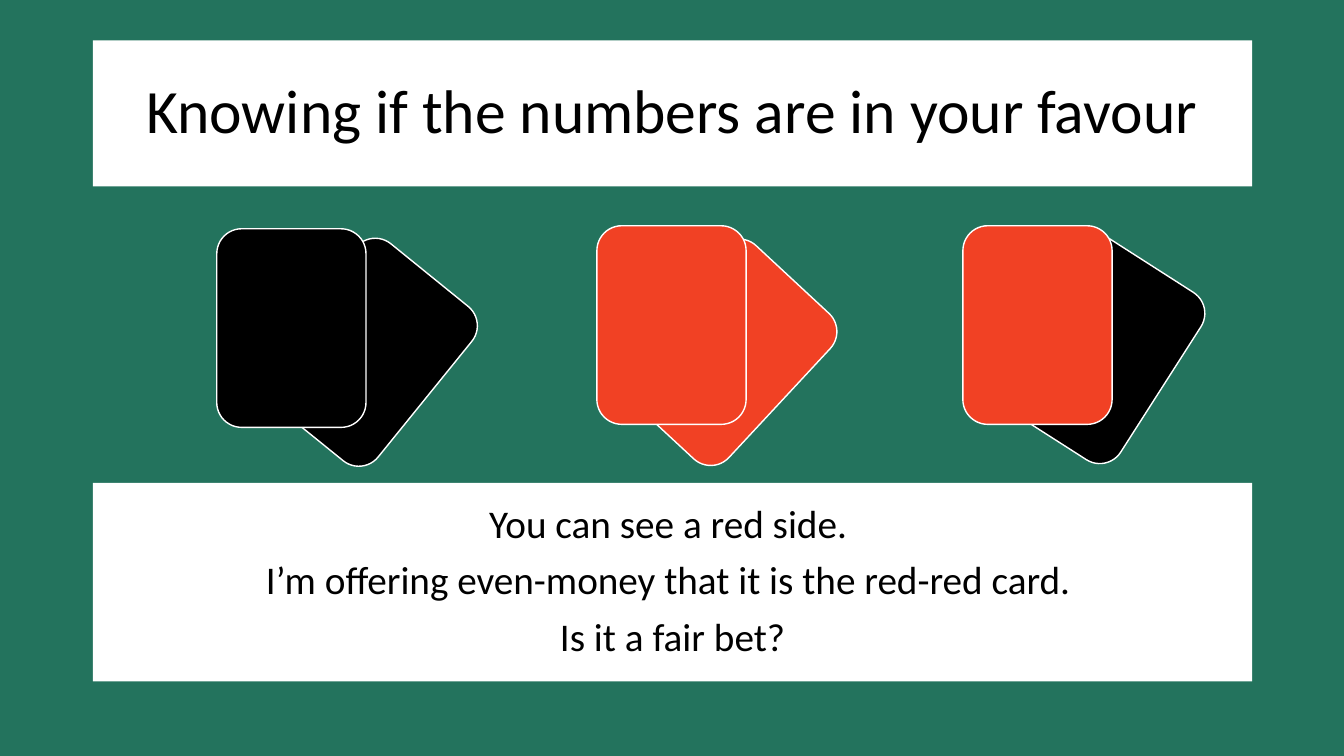
from dataclasses import dataclass

from lxml import etree
from pptx import Presentation
from pptx.dml.color import RGBColor
from pptx.enum.shapes import MSO_SHAPE
from pptx.enum.text import MSO_ANCHOR, MSO_AUTO_SIZE, PP_ALIGN
from pptx.oxml.ns import qn
from pptx.shapes.placeholder import SlidePlaceholder
from pptx.slide import Slide
from pptx.util import Emu, Pt

ROUNDED = MSO_SHAPE.ROUNDED_RECTANGLE
MIDDLE = MSO_ANCHOR.MIDDLE
NO_AUTOFIT = MSO_AUTO_SIZE.NONE
CENTER = PP_ALIGN.CENTER
EMU_PER_PX = 9144


@dataclass(frozen=True)
class Theme:
    table_green: RGBColor = RGBColor(0x23, 0x73, 0x5D)
    white: RGBColor = RGBColor(0xFF, 0xFF, 0xFF)
    black: RGBColor = RGBColor(0, 0, 0)
    red: RGBColor = RGBColor(0xF1, 0x41, 0x24)
    font: str = "Calibri"
    title_size: Pt = Pt(44)
    question_size: Pt = Pt(28)
    paragraph_gap: Pt = Pt(10)
    card_edge: Pt = Pt(1)


@dataclass(frozen=True)
class Card:
    left: int
    top: int
    color: RGBColor
    angle: float = 0


THEME = Theme()
SLIDE_WIDTH, SLIDE_HEIGHT = 1333, 750
PANEL_LEFT, PANEL_WIDTH = 92, 1150
CARD_WIDTH, CARD_HEIGHT = 148, 197
TITLE = "Knowing if the numbers are in your favour"
QUESTION = [
    "You can see a red side. ",
    "I’m offering even-money that it is the red-red card. ",
    "Is it a fair bet?",
]
CARDS = [
    Card(1015, 248, THEME.black, 32.6),
    Card(955, 224, THEME.red),
    Card(645, 251, THEME.red, 42.9),
    Card(592, 224, THEME.red),
    Card(290, 251, THEME.black, 39),
    Card(215, 227, THEME.black),
]


def px(length: int) -> Emu:
    return Emu(length * EMU_PER_PX)


def fill_panel(panel: SlidePlaceholder, top: int, height: int,
               lines: list[str], size: Pt) -> None:
    panel.left, panel.top = px(PANEL_LEFT), px(top)
    panel.width, panel.height = px(PANEL_WIDTH), px(height)
    panel.fill.solid()
    panel.fill.fore_color.rgb = THEME.white
    frame = panel.text_frame
    frame.word_wrap = True
    frame.auto_size = NO_AUTOFIT
    frame.vertical_anchor = MIDDLE
    for index, line in enumerate(lines):
        paragraph = frame.add_paragraph() if index else frame.paragraphs[0]
        paragraph.alignment = CENTER
        paragraph.line_spacing = 0.9
        paragraph.space_before = THEME.paragraph_gap if index else Pt(0)
        properties = paragraph._p.get_or_add_pPr()
        properties.set("marL", "0")
        properties.set("indent", "0")
        etree.SubElement(properties, qn("a:buNone"))
        run = paragraph.add_run()
        run.text = line
        run.font.name = THEME.font
        run.font.size = size
        run.font.color.rgb = THEME.black


def draw_card(slide: Slide, card: Card) -> None:
    face = slide.shapes.add_shape(ROUNDED, px(card.left), px(card.top),
                                  px(CARD_WIDTH), px(CARD_HEIGHT))
    face.rotation = card.angle
    face.shadow.inherit = False
    face.fill.solid()
    face.fill.fore_color.rgb = card.color
    face.line.color.rgb = THEME.white
    face.line.width = THEME.card_edge


def main() -> None:
    deck = Presentation()
    deck.slide_width, deck.slide_height = px(SLIDE_WIDTH), px(SLIDE_HEIGHT)
    slide = deck.slides.add_slide(deck.slide_layouts[1])
    slide.background.fill.solid()
    slide.background.fill.fore_color.rgb = THEME.table_green
    fill_panel(slide.shapes.title, 40, 145, [TITLE], THEME.title_size)
    fill_panel(slide.placeholders[1], 479, 197, QUESTION, THEME.question_size)
    for card in CARDS:
        draw_card(slide, card)
    deck.save("out.pptx")


if __name__ == "__main__":
    main()
